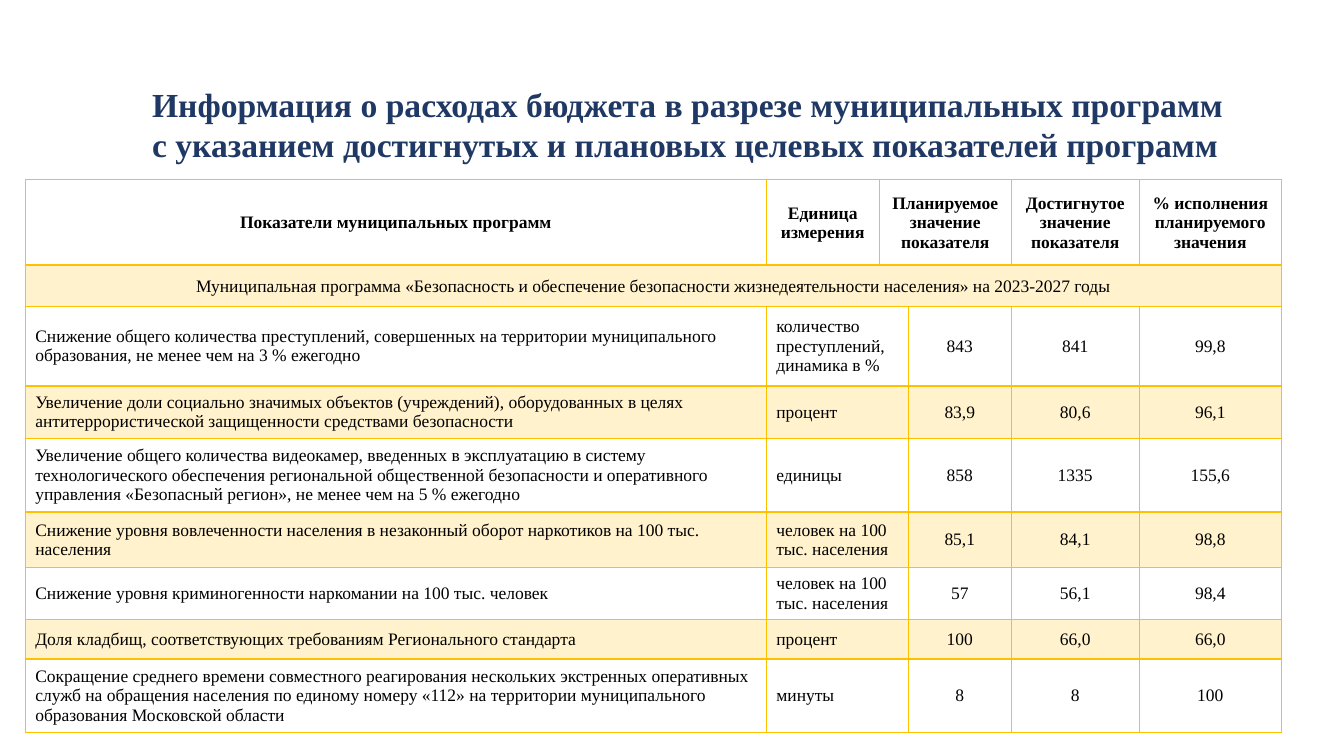
from dataclasses import dataclass

from lxml import etree
from pptx import Presentation
from pptx import util as u
from pptx.dml.color import RGBColor
from pptx.enum import text
from pptx.oxml import ns

COLORS = {"title": "203864", "ink": "000000", "gold": "FFC000"}
FONT = "Times New Roman"
COLUMN_WIDTHS = [7.35, 1.12, 0.29, 1.02, 1.27, 1.41]
ROW_HEIGHTS = [0.85, 0.41, 0.79, 0.52, 0.73, 0.55, 0.52, 0.39, 0.73]
TABLE_LEFT, TABLE_TOP = 0.25, 1.78
UNIT_COLUMN = 1


@dataclass
class Indicator:
    name: str
    unit: str
    planned: str
    achieved: str
    percent: str


TITLE = ("Информация о расходах бюджета в разрезе муниципальных программ\v"
         "с указанием достигнутых и плановых целевых показателей программ")
HEADINGS = ["Показатели муниципальных программ", "Единица измерения",
            "Планируемое значение показателя", "", "Достигнутое значение показателя",
            "% исполнения планируемого значения"]
PROGRAM = ("Муниципальная программа «Безопасность и обеспечение безопасности "
           "жизнедеятельности населения» на 2023-2027 годы")
INDICATORS = [
    Indicator("Снижение общего количества преступлений, совершенных на территории "
              "муниципального образования, не менее чем на 3 % ежегодно",
              "количество преступлений, динамика в %", "843", "841", "99,8"),
    Indicator("Увеличение доли социально значимых объектов (учреждений), оборудованных в целях "
              "антитеррористической защищенности средствами безопасности",
              "процент", "83,9", "80,6", "96,1"),
    Indicator("Увеличение общего количества видеокамер, введенных в эксплуатацию в систему "
              "технологического обеспечения региональной общественной безопасности и "
              "оперативного управления «Безопасный регион», не менее чем на 5 % ежегодно",
              "единицы", "858", "1335", "155,6"),
    Indicator("Снижение уровня вовлеченности населения в незаконный оборот наркотиков "
              "на 100 тыс. населения",
              "человек на 100 тыс. населения", "85,1", "84,1", "98,8"),
    Indicator("Снижение уровня криминогенности наркомании на 100 тыс. человек",
              "человек на 100 тыс. населения", "57", "56,1", "98,4"),
    Indicator("Доля кладбищ, соответствующих требованиям Регионального стандарта",
              "процент", "100", "66,0", "66,0"),
    Indicator("Сокращение среднего времени совместного реагирования нескольких экстренных "
              "оперативных служб на обращения населения по единому номеру «112» на территории "
              "муниципального образования Московской области",
              "минуты", "8", "8", "100"),
]


def write(frame, words: str, *, size: float = 12.5, color: str = "ink",
          bold: bool = False, centered: bool = False) -> None:
    frame.text = words
    para = frame.paragraphs[0]
    para.alignment = text.PP_ALIGN.CENTER if centered else text.PP_ALIGN.LEFT
    for span in para.runs:
        span.font.name = FONT
        span.font.size = u.Pt(size)
        span.font.bold = bold
        span.font.color.rgb = RGBColor.from_string(COLORS[color])


def draw_borders(cell, bottom_width: float = 1) -> None:
    properties = cell._tc.get_or_add_tcPr()
    for side in "LRTB":
        width = bottom_width if side == "B" else 1
        line = etree.SubElement(properties, ns.qn(f"a:ln{side}"), w=str(u.Pt(width)))
        fill = etree.SubElement(line, ns.qn("a:solidFill"))
        etree.SubElement(fill, ns.qn("a:srgbClr"), val=COLORS["gold"])


def shade(cell, tinted: bool) -> None:
    if not tinted:
        cell.fill.background()
        return
    cell.fill.solid()
    cell.fill.fore_color.rgb = RGBColor.from_string(COLORS["gold"])
    color = cell._tc.tcPr.find(ns.qn("a:solidFill")).find(ns.qn("a:srgbClr"))
    etree.SubElement(color, ns.qn("a:alpha"), val="20000")


def tighten(cell) -> None:
    cell.margin_left = cell.margin_right = cell.margin_top = u.Inches(0.01)
    cell.margin_bottom = 0


def add_title(page) -> None:
    box = page.shapes.add_textbox(u.Inches(1.41), u.Inches(0.78), u.Inches(12.03), u.Inches(0.91))
    box.text_frame.word_wrap = True
    write(box.text_frame, TITLE, size=24, color="title", bold=True)


def add_indicator_table(page) -> None:
    table = page.shapes.add_table(
        len(ROW_HEIGHTS), len(COLUMN_WIDTHS), u.Inches(TABLE_LEFT), u.Inches(TABLE_TOP),
        u.Inches(sum(COLUMN_WIDTHS)), u.Inches(sum(ROW_HEIGHTS))).table
    table.first_row = table.horz_banding = False
    for column, width in zip(table.columns, COLUMN_WIDTHS):
        column.width = u.Inches(width)
    for row, height in zip(table.rows, ROW_HEIGHTS):
        row.height = u.Inches(height)

    # Headings, the program line, then one row per indicator
    rows = [HEADINGS, [PROGRAM] + [""] * 5]
    rows += [[item.name, item.unit, "", item.planned, item.achieved, item.percent]
             for item in INDICATORS]
    for r, values in enumerate(rows):
        for c, value in enumerate(values):
            cell = table.cell(r, c)
            cell.vertical_anchor = text.MSO_ANCHOR.MIDDLE
            if r < 2:
                tighten(cell)
            draw_borders(cell, bottom_width=2 if r == 0 else 1)
            shade(cell, tinted=r % 2 == 1)
            write(cell.text_frame, value, bold=r == 0, centered=r < 2 or c > UNIT_COLUMN)

    # Merged cells
    table.cell(0, 2).merge(table.cell(0, 3))
    table.cell(1, 0).merge(table.cell(1, 5))
    for r in range(2, len(rows)):
        table.cell(r, UNIT_COLUMN).merge(table.cell(r, UNIT_COLUMN + 1))


def main() -> None:
    deck = Presentation()
    deck.slide_width, deck.slide_height = u.Inches(13.33), u.Inches(7.5)
    page = deck.slides.add_slide(deck.slide_layouts[6])
    add_title(page)
    add_indicator_table(page)
    deck.save("out.pptx")


if __name__ == "__main__":
    main()
